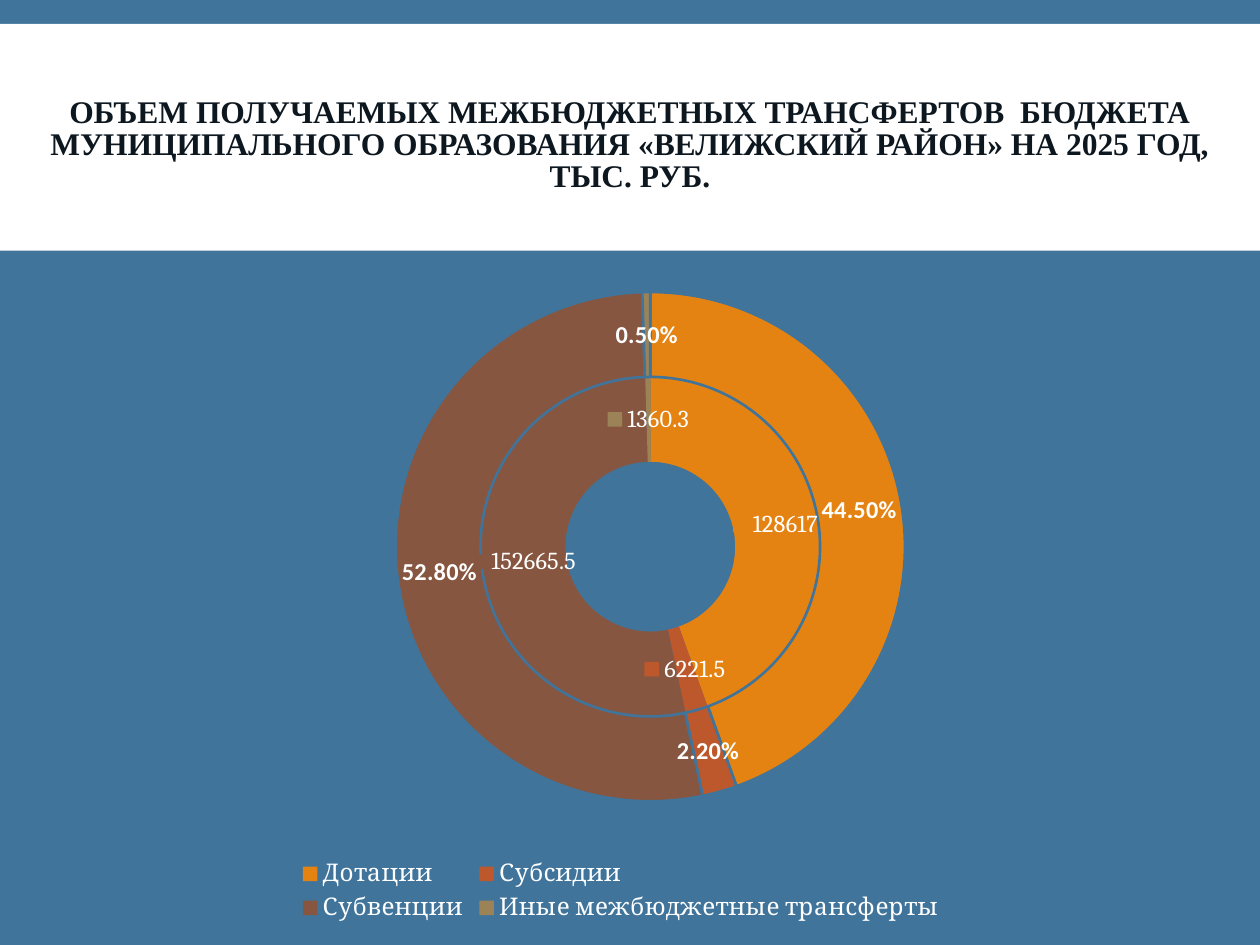
"""Build the slide on intergovernmental transfers with a two-ring doughnut chart."""
from lxml import etree
from pptx import Presentation
from pptx.chart.data import CategoryChartData
from pptx.dml.color import RGBColor
from pptx.enum.chart import XL_CHART_TYPE as CHART, XL_LEGEND_POSITION as LEGEND
from pptx.enum.shapes import MSO_SHAPE as SHAPE
from pptx.enum.text import MSO_ANCHOR as ANCHOR, PP_ALIGN as ALIGN
from pptx.oxml.ns import qn
from pptx.util import Inches, Pt

BLUE = RGBColor(0x40, 0x74, 0x9B)
WHITE = RGBColor(0xFF, 0xFF, 0xFF)
INK = RGBColor(0x0D, 0x17, 0x1F)
COLORS = [RGBColor(0xE4, 0x83, 0x12), RGBColor(0xBD, 0x58, 0x2C),
          RGBColor(0x86, 0x56, 0x40), RGBColor(0x9B, 0x83, 0x57)]


def make_layout(x, y, w, h, inner=False):
    layout = etree.Element(qn("c:layout"))
    manual = etree.SubElement(layout, qn("c:manualLayout"))
    values = [("xMode", "edge"), ("yMode", "edge"), ("x", x), ("y", y), ("w", w), ("h", h)]
    if inner:
        values.insert(0, ("layoutTarget", "inner"))
    for name, value in values:
        etree.SubElement(manual, qn("c:" + name)).set("val", str(value))
    return layout


def set_font(font, name, size, color, bold=False):
    font.name = name
    font.size = Pt(size)
    font.color.rgb = color
    font.bold = bold


prs = Presentation()
prs.slide_width, prs.slide_height = Inches(10), Inches(7.5)
s = prs.slides.add_slide(prs.slide_layouts[6])
s.background.fill.solid()
s.background.fill.fore_color.rgb = BLUE

band = s.shapes.add_shape(SHAPE.RECTANGLE, 0, Inches(0.19), Inches(10), Inches(1.8))
band.shadow.inherit = False
band.fill.solid()
band.fill.fore_color.rgb = WHITE
band.line.fill.background()

title = s.shapes.add_textbox(0, Inches(0.58), Inches(10), Inches(1.16))
tf = title.text_frame
tf.word_wrap = True
tf.vertical_anchor = ANCHOR.MIDDLE
p = tf.paragraphs[0]
p.alignment = ALIGN.CENTER
p.line_spacing = 0.85
r = p.add_run()
r.text = ("ОБЪЕМ ПОЛУЧАЕМЫХ МЕЖБЮДЖЕТНЫХ ТРАНСФЕРТОВ  БЮДЖЕТА МУНИЦИПАЛЬНОГО "
          "ОБРАЗОВАНИЯ «ВЕЛИЖСКИЙ РАЙОН» НА 2025 ГОД, ТЫС. РУБ.")
set_font(r.font, "Times New Roman", 18, INK, True)

data = CategoryChartData()
data.categories = ["Дотации", "Субсидии", "Субвенции", "Иные межбюджетные трансферты"]
data.add_series("Series 1", [128617, 6221.5, 152665.5, 1360.3])
data.add_series("Series 2", [0.445, 0.022, 0.528, 0.005], "0.00%")
chart = s.shapes.add_chart(CHART.DOUGHNUT, 0, Inches(2), Inches(9.86), Inches(5.36), data).chart
chart.has_title = False
set_font(chart.font, "Calibri", 10, WHITE)

plot_area = chart.plots[0]._element.getparent()
for old in plot_area.findall(qn("c:layout")):
    plot_area.remove(old)
plot_area.insert(0, make_layout(0.304, 0.033, 0.439, 0.807, inner=True))

chart.has_legend = True
legend = chart.legend
legend.position = LEGEND.BOTTOM
legend.include_in_layout = False
set_font(legend.font, "Cambria", 13.9, WHITE)
legend._element.find(qn("c:legendPos")).addnext(make_layout(0.02, 0.08, 0.2, 0.48))

amounts, shares = chart.plots[0].series
for ring in (amounts, shares):
    for i, color in enumerate(COLORS):
        fmt = ring.points[i].format
        fmt.fill.solid()
        fmt.fill.fore_color.rgb = color
        if ring is shares:
            fmt.line.color.rgb = BLUE
            fmt.line.width = Pt(1.5)
        else:
            fmt.line.fill.background()
    ring.data_labels.show_value = True

explosion = etree.Element(qn("c:explosion"))
explosion.set("val", "21")
amounts._element.find(qn("c:tx")).addnext(explosion)
amounts.data_labels.show_legend_key = True
set_font(amounts.data_labels.font, "Cambria", 13.9, WHITE)
shares.data_labels.number_format = "0.00%"
shares.data_labels.number_format_is_linked = False
set_font(shares.data_labels.font, "Calibri", 13.9, WHITE, True)

prs.save("out.pptx")
